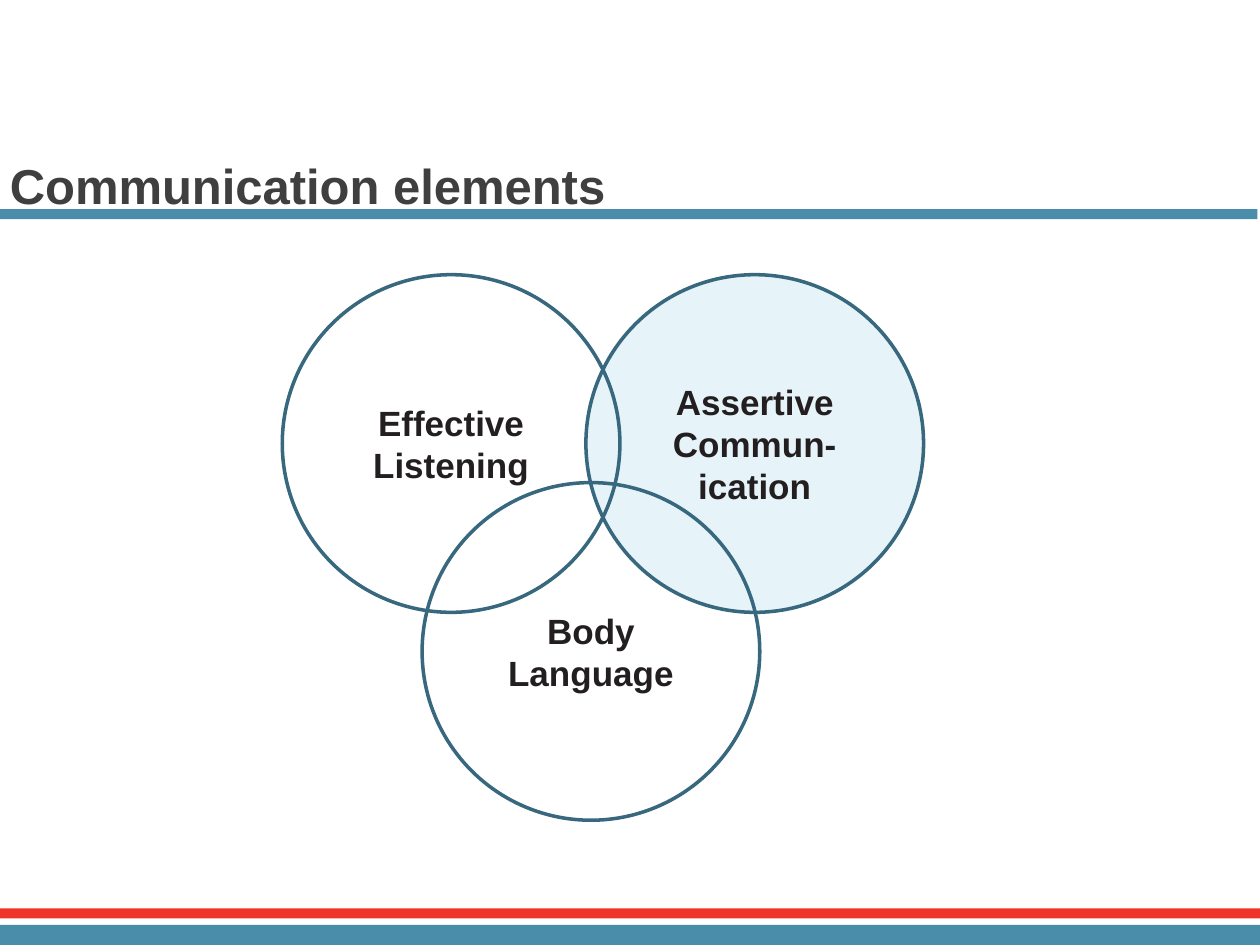
from pptx import Presentation
from pptx.dml.color import RGBColor
from pptx.enum.shapes import MSO_SHAPE
from pptx.enum.text import MSO_ANCHOR, PP_ALIGN
from pptx.util import Inches, Pt

RECTANGLE, OVAL = MSO_SHAPE.RECTANGLE, MSO_SHAPE.OVAL
BOTTOM, MIDDLE = MSO_ANCHOR.BOTTOM, MSO_ANCHOR.MIDDLE
LEFT, CENTER = PP_ALIGN.LEFT, PP_ALIGN.CENTER

COLORS = {
    "blue": "4A8DAA",
    "red": "EE3528",
    "pale blue": "E6F3F8",
    "outline": "37687E",
    "title": "3F3F3F",
    "label": "231F20",
}
TITLE = "Communication elements"
BARS = [  # left, top, height, color
    (-0.02, 1.66, 0.08, "blue"),
    (0, 7.34, 0.16, "blue"),
    (0, 7.21, 0.08, "red"),
]
DIAMETER = 2.68
CIRCLES = [  # label, left, top, fill
    ("Assertive Commun-ication", 4.65, 2.18, "pale blue"),
    ("Body Language", 3.35, 3.83, None),
    ("Effective Listening", 2.24, 2.18, None),
]


def color(name):
    return RGBColor.from_string(COLORS[name])


def add_shape(slide, kind, left, top, width, height, fill=None, outline=None):
    shape = slide.shapes.add_shape(
        kind, Inches(left), Inches(top), Inches(width), Inches(height))
    shape.shadow.inherit = False
    if fill:
        shape.fill.solid()
        shape.fill.fore_color.rgb = color(fill)
    else:
        shape.fill.background()
    if outline:
        shape.line.color.rgb = color(outline)
        shape.line.width = Pt(2)
    else:
        shape.line.fill.background()
    return shape


def write_text(shape, text, size, ink, align, anchor, wrap=True, spacing=None):
    frame = shape.text_frame
    frame.word_wrap = wrap
    frame.vertical_anchor = anchor
    paragraph = frame.paragraphs[0]
    paragraph.alignment = align
    paragraph.line_spacing = spacing
    run = paragraph.add_run()
    run.text = text
    run.font.name = "Arial"
    run.font.size = Pt(size)
    run.font.bold = True
    run.font.color.rgb = color(ink)


def main():
    presentation = Presentation()
    presentation.slide_width = Inches(10)
    presentation.slide_height = Inches(7.5)
    slide = presentation.slides.add_slide(presentation.slide_layouts[6])

    for left, top, height, fill in BARS:
        add_shape(slide, RECTANGLE, left, top, 10, height, fill)

    title = slide.shapes.add_textbox(
        Inches(-0.02), Inches(1.11), Inches(6.77), Inches(0.64))
    write_text(title, TITLE, size=28, ink="title", align=LEFT, anchor=BOTTOM,
               wrap=False, spacing=0.85)

    for label, left, top, fill in CIRCLES:
        circle = add_shape(slide, OVAL, left, top, DIAMETER, DIAMETER,
                           fill, "outline")
        write_text(circle, label, size=20, ink="label", align=CENTER,
                   anchor=MIDDLE)

    presentation.save("out.pptx")


if __name__ == "__main__":
    main()
